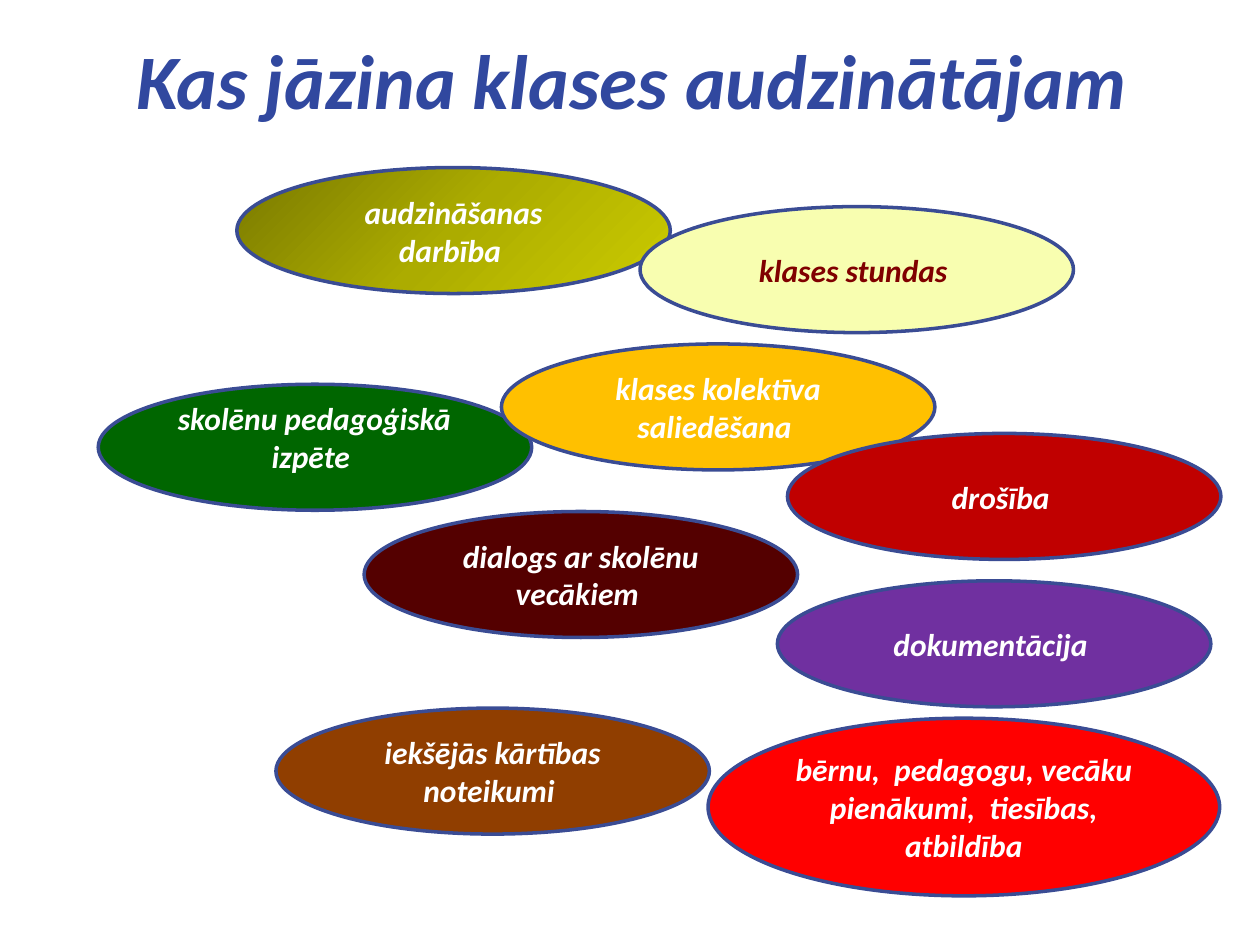
from copy import deepcopy

from pptx import Presentation
from pptx.dml.color import RGBColor
from pptx.enum.shapes import MSO_SHAPE
from pptx.enum.text import MSO_ANCHOR, MSO_AUTO_SIZE, PP_ALIGN
from pptx.util import Inches, Pt

TITLE = "Kas jāzina klases audzinātājam"
OUTLINE = "3A4C94"
WHITE = "FFFFFF"
OVAL_SIZE = (3.44, 1)
LARGE_OVAL_SIZE = (4.06, 1.41)
OLIVE_STOPS = ((0, "797900"), (0.5, "ACAC00"), (1, "CCCC00"))
RESEARCH_TEXT = "skolēnu pedagoģiskā izpēte "
RESEARCH_BOX = (1.09, 3.12, 2.81, 0.71)

TOPICS = [
    ("audzināšanas darbība ", (1.88, 1.33), OVAL_SIZE, OLIVE_STOPS, WHITE),
    ("klases stundas ", (5.08, 1.64), OVAL_SIZE, "F8FEB0", "800000"),
    (RESEARCH_TEXT, (0.78, 3.05), OVAL_SIZE, "006600", WHITE),
    ("klases kolektīva saliedēšana ", (3.98, 2.73), OVAL_SIZE, "FFC000", WHITE),
    ("dialogs ar skolēnu vecākiem ", (2.89, 4.06), OVAL_SIZE, "540000", WHITE),
    ("dokumentācija ", (6.17, 4.61), OVAL_SIZE, "7030A0", WHITE),
    ("iekšējās kārtības noteikumi ", (2.19, 5.62), OVAL_SIZE, "903E00", WHITE),
    ("drošība ", (6.25, 3.44), OVAL_SIZE, "C00000", WHITE),
    ("bērnu,  pedagogu, vecāku pienākumi,  tiesības, atbildība",
     (5.62, 5.7), LARGE_OVAL_SIZE, "FF0000", WHITE),
]


def color(value):
    return RGBColor.from_string(value)


def write(shape, text, size=18, ink=WHITE, align=PP_ALIGN.CENTER,
          anchor=MSO_ANCHOR.MIDDLE, wrap=True, fit=MSO_AUTO_SIZE.NONE):
    frame = shape.text_frame
    frame.word_wrap = wrap
    frame.auto_size = fit
    frame.vertical_anchor = anchor
    para = frame.paragraphs[0]
    para.alignment = align
    span = para.add_run()
    span.text = text
    span.font.name = "Calibri"
    span.font.size = Pt(size)
    span.font.bold = span.font.italic = True
    span.font.color.rgb = color(ink)


def paint(fill, paint_value):
    if isinstance(paint_value, str):
        fill.solid()
        fill.fore_color.rgb = color(paint_value)
        return
    fill.gradient()
    fill.gradient_angle = 315
    first_stop = fill._fill._gradFill.gsLst[0]
    first_stop.addnext(deepcopy(first_stop))
    for stop, (position, value) in zip(fill.gradient_stops, paint_value):
        stop.position = position
        stop.color.rgb = color(value)


def add_oval(page, place, size, paint_value):
    oval = page.shapes.add_shape(MSO_SHAPE.OVAL, *map(Inches, place + size))
    oval.shadow.inherit = False
    paint(oval.fill, paint_value)
    oval.line.color.rgb = color(OUTLINE)
    oval.line.width = Pt(2)
    return oval


def main():
    deck = Presentation()
    deck.slide_width, deck.slide_height = Inches(10), Inches(7.5)
    page = deck.slides.add_slide(deck.slide_layouts[5])

    title = page.shapes.title
    title.left, title.top, title.width, title.height = map(
        Inches, (0.98, 0.21, 8.15, 0.84))
    write(title, TITLE, size=44, ink="31489F", align=PP_ALIGN.LEFT,
          anchor=MSO_ANCHOR.TOP, wrap=False, fit=MSO_AUTO_SIZE.SHAPE_TO_FIT_TEXT)

    for text, place, size, paint_value, ink in TOPICS:
        oval = add_oval(page, place, size, paint_value)
        if text == RESEARCH_TEXT:
            box = page.shapes.add_textbox(*map(Inches, RESEARCH_BOX))
            write(box, text, ink=ink, anchor=MSO_ANCHOR.TOP,
                  fit=MSO_AUTO_SIZE.SHAPE_TO_FIT_TEXT)
        else:
            write(oval, text, ink=ink)

    deck.save("out.pptx")


if __name__ == "__main__":
    main()
